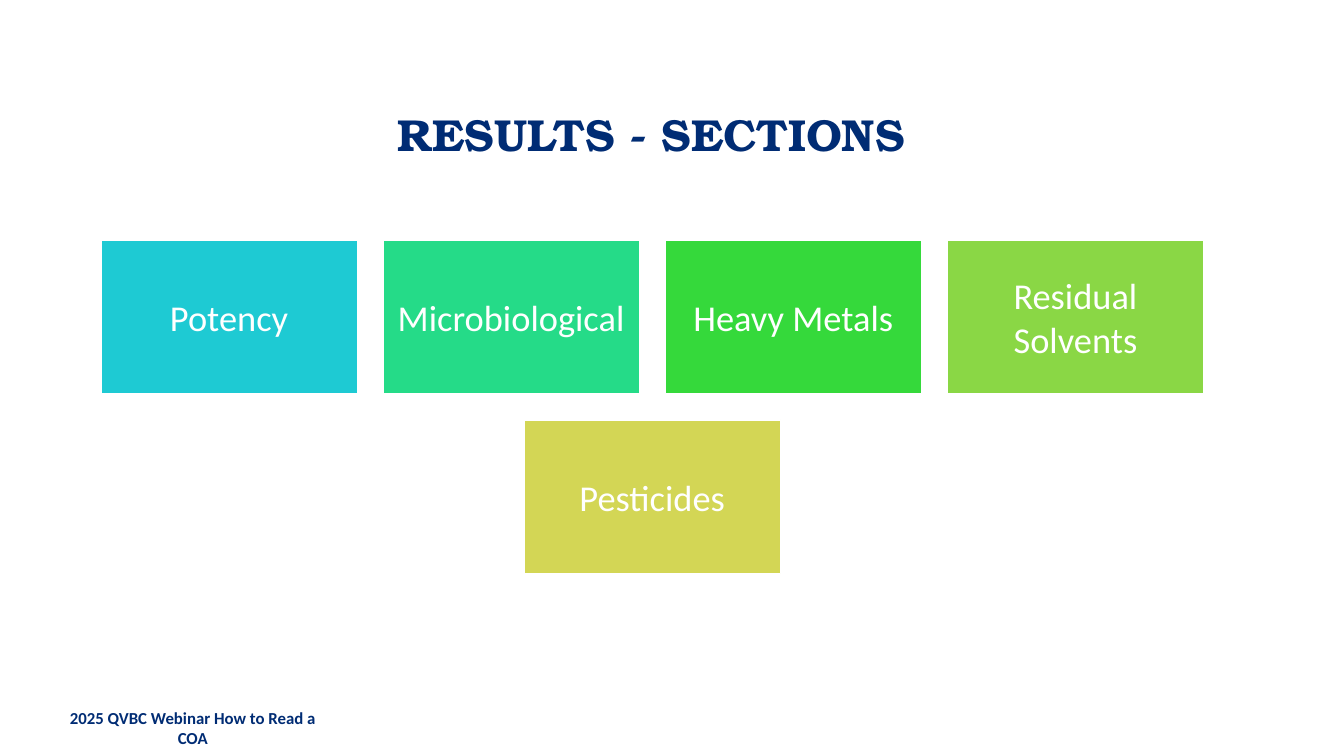
from pptx import Presentation
from pptx.dml.color import RGBColor
from pptx.enum.shapes import MSO_SHAPE
from pptx.enum.text import MSO_ANCHOR, PP_ALIGN
from pptx.util import Cm, Pt

COLORS = {
    "navy": "002C74",
    "white": "FFFFFF",
    "cyan": "1ECAD3",
    "mint": "25DB88",
    "green": "35D93B",
    "lime": "8AD745",
    "olive": "D3D655",
}
SECTIONS = [
    ("Potency", "cyan"),
    ("Microbiological", "mint"),
    ("Heavy Metals", "green"),
    ("Residual Solvents", "lime"),
    ("Pesticides", "olive"),
]
CARDS_PER_ROW = 4
CARD_WIDTH, CARD_HEIGHT, CARD_GAP = 6.46, 3.88, 0.65


def color(name):
    return RGBColor.from_string(COLORS[name])


def write(frame, text, size, font="Calibri", ink="navy", bold=False,
          anchor=MSO_ANCHOR.TOP, wrap=True, inset=None):
    frame.word_wrap = wrap
    frame.vertical_anchor = anchor
    if inset is not None:
        frame.margin_left = frame.margin_right = Cm(inset)
        frame.margin_top = frame.margin_bottom = Cm(inset)
    paragraph = frame.paragraphs[0]
    paragraph.alignment = PP_ALIGN.CENTER
    run = paragraph.add_run()
    run.text = text
    run.font.size = Pt(size)
    run.font.name = font
    run.font.bold = bold
    run.font.color.rgb = color(ink)


def add_heading(slide, left, top, width, height):
    heading = slide.shapes.title
    heading.left, heading.top = Cm(left), Cm(top)
    heading.width, heading.height = Cm(width), Cm(height)
    write(heading.text_frame, "RESULTS - SECTIONS", 32,
          font="TeX Gyre Bonum", bold=True)


def add_webinar_note(slide, left, top, width, height):
    note = slide.shapes.add_textbox(Cm(left), Cm(top), Cm(width), Cm(height))
    write(note.text_frame, "2025 QVBC Webinar How to Read a COA", 12,
          bold=True, wrap=False)


def add_card(slide, left, top, label, fill):
    card = slide.shapes.add_shape(MSO_SHAPE.RECTANGLE, Cm(left), Cm(top),
                                  Cm(CARD_WIDTH), Cm(CARD_HEIGHT))
    card.shadow.inherit = False
    card.fill.solid()
    card.fill.fore_color.rgb = color(fill)
    card.line.color.rgb = color("white")
    card.line.width = Pt(1)
    write(card.text_frame, label, 26, ink="white",
          anchor=MSO_ANCHOR.MIDDLE, inset=0.28)


def add_sections(slide, left, top, width):
    for start in range(0, len(SECTIONS), CARDS_PER_ROW):
        row = SECTIONS[start:start + CARDS_PER_ROW]
        row_width = len(row) * (CARD_WIDTH + CARD_GAP) - CARD_GAP
        row_left = left + (width - row_width) / 2
        row_top = top + start // CARDS_PER_ROW * (CARD_HEIGHT + CARD_GAP)
        for column, (label, fill) in enumerate(row):
            card_left = row_left + column * (CARD_WIDTH + CARD_GAP)
            add_card(slide, card_left, row_top, label, fill)


def main():
    deck = Presentation()
    deck.slide_width, deck.slide_height = Cm(33.87), Cm(19.05)
    slide = deck.slides.add_slide(deck.slide_layouts[5])
    add_heading(slide, 0.3, 2.57, 32.23, 8.69)
    add_webinar_note(slide, 1.09, 17.7, 7.54, 0.76)
    add_sections(slide, 2.54, 6.05, 27.8)
    deck.save("out.pptx")


if __name__ == "__main__":
    main()
